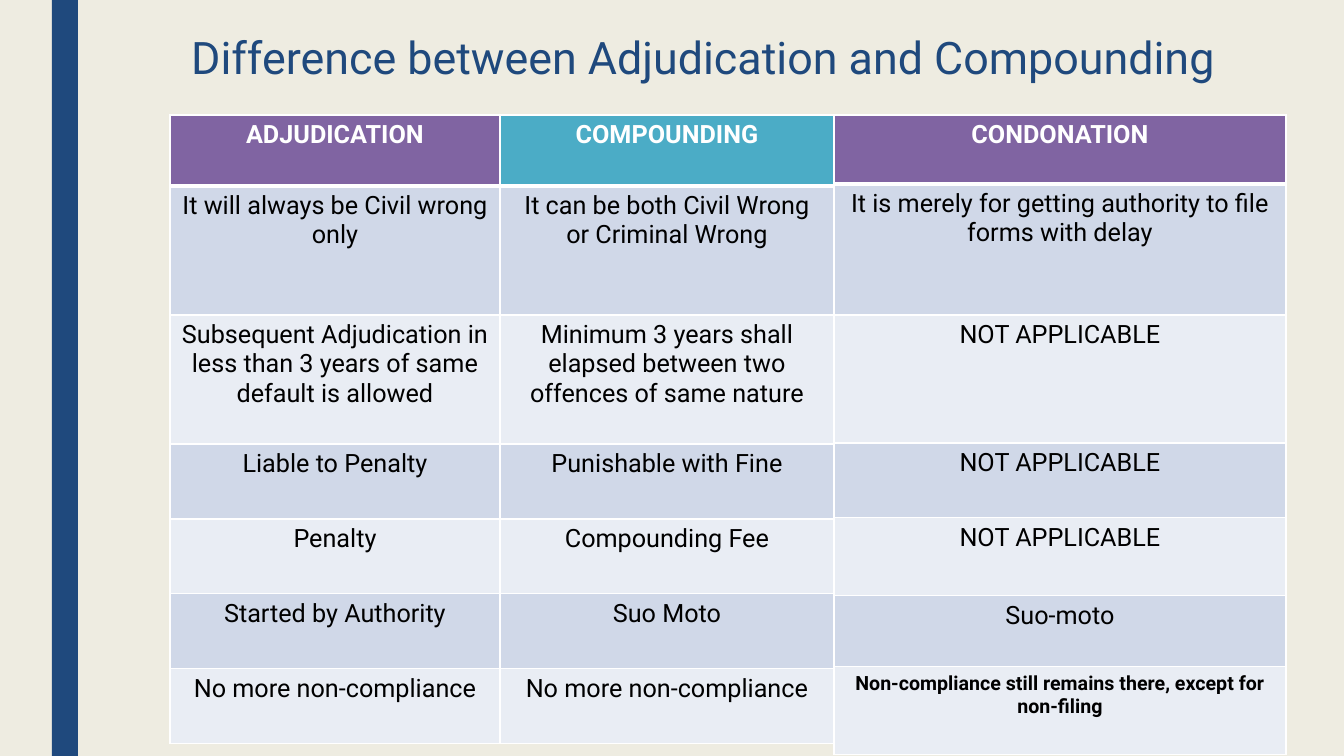
from dataclasses import dataclass

from lxml.etree import SubElement
from pptx import Presentation
from pptx.dml.color import RGBColor
from pptx.enum.shapes import MSO_SHAPE
from pptx.enum.text import MSO_ANCHOR, PP_ALIGN
from pptx.oxml.ns import qn
from pptx.util import Emu, Pt


@dataclass(frozen=True)
class Theme:
    font: str = "Roboto"
    background: str = "EEECE1"
    navy: str = "1F497D"
    purple: str = "8064A2"
    teal: str = "4BACC6"
    white: str = "FFFFFF"
    black: str = "000000"
    bands: tuple = ("E9EDF4", "D0D8E8")
    title_size: int = 32
    cell_size: int = 18
    small_size: int = 14
    thin_line: int = 1
    header_line: int = 3


THEME = Theme()
TITLE = "Difference between Adjudication and Compounding"
SMALL_BOLD = "Non-compliance still remains there, except for non-filing"
TABLE_TOP = 115
TABLES = [
    {
        "left": 170,
        "columns": [330, 334],
        "rows": [71, 129, 129, 75, 75, 75, 75],
        "headers": [THEME.purple, THEME.teal],
        "content": [
            ("ADJUDICATION", "COMPOUNDING"),
            ("It will always be Civil wrong only", "It can be both Civil Wrong or Criminal Wrong"),
            (
                "Subsequent Adjudication in less than 3 years of same default is allowed",
                "Minimum 3 years shall elapsed between two offences of same nature",
            ),
            ("Liable to Penalty", "Punishable with Fine"),
            ("Penalty", "Compounding Fee"),
            ("Started by Authority", "Suo Moto"),
            ("No more non-compliance", "No more non-compliance"),
        ],
    },
    {
        "left": 834,
        "columns": [452],
        "rows": [69, 131, 128, 75, 78, 71, 88],
        "headers": [THEME.purple],
        "content": [
            ("CONDONATION",),
            ("It is merely for getting authority to file forms with delay",),
            ("NOT APPLICABLE",),
            ("NOT APPLICABLE",),
            ("NOT APPLICABLE",),
            ("Suo-moto",),
            (SMALL_BOLD,),
        ],
    },
]


def px(length):
    return Emu(round(length * 914400 / 100.8))


def color(value):
    return RGBColor.from_string(value)


def format_text(paragraph, size, text_color, bold=False):
    paragraph.alignment = PP_ALIGN.CENTER
    for run in paragraph.runs:
        run.font.name = THEME.font
        run.font.size = Pt(size)
        run.font.bold = bold
        run.font.color.rgb = color(text_color)


def add_borders(cell, row_index):
    widths = {
        "a:lnL": THEME.thin_line,
        "a:lnR": THEME.thin_line,
        "a:lnT": THEME.header_line if row_index == 1 else THEME.thin_line,
        "a:lnB": THEME.header_line if row_index == 0 else THEME.thin_line,
    }
    properties = cell._tc.get_or_add_tcPr()
    for tag, width in widths.items():
        line = SubElement(properties, qn(tag), w=str(Pt(width)))
        fill = SubElement(line, qn("a:solidFill"))
        SubElement(fill, qn("a:srgbClr"), val=THEME.white)


def add_side_bar(slide):
    bar = slide.shapes.add_shape(MSO_SHAPE.RECTANGLE, px(52), 0, px(26), px(756))
    bar.shadow.inherit = False
    bar.fill.solid()
    bar.fill.fore_color.rgb = color(THEME.navy)
    bar.line.fill.background()


def add_title(slide):
    title = slide.shapes.title
    title.left, title.top, title.width, title.height = px(151), px(31), px(1105), px(82)
    title.text_frame.text = TITLE
    title.text_frame.word_wrap = True
    title.text_frame.vertical_anchor = MSO_ANCHOR.TOP
    paragraph = title.text_frame.paragraphs[0]
    paragraph.line_spacing = 0.89
    format_text(paragraph, THEME.title_size, THEME.navy)


def add_comparison(slide, comparison):
    columns, rows = comparison["columns"], comparison["rows"]
    table = slide.shapes.add_table(
        len(rows), len(columns), px(comparison["left"]), px(TABLE_TOP),
        px(sum(columns)), px(sum(rows)),
    ).table
    for column, width in zip(table.columns, columns):
        column.width = px(width)
    for row, height in zip(table.rows, rows):
        row.height = px(height)
    for row_index, texts in enumerate(comparison["content"]):
        for column_index, text in enumerate(texts):
            cell = table.cell(row_index, column_index)
            is_header = row_index == 0
            is_small = text == SMALL_BOLD
            add_borders(cell, row_index)
            cell.fill.solid()
            cell.fill.fore_color.rgb = color(
                comparison["headers"][column_index] if is_header else THEME.bands[row_index % 2]
            )
            cell.text_frame.text = text
            format_text(
                cell.text_frame.paragraphs[0],
                THEME.small_size if is_small else THEME.cell_size,
                THEME.white if is_header else THEME.black,
                is_header or is_small,
            )


def main():
    presentation = Presentation()
    presentation.slide_width, presentation.slide_height = px(1344), px(756)
    slide = presentation.slides.add_slide(presentation.slide_layouts[5])
    slide.background.fill.solid()
    slide.background.fill.fore_color.rgb = color(THEME.background)
    add_side_bar(slide)
    add_title(slide)
    for comparison in TABLES:
        add_comparison(slide, comparison)
    presentation.save("out.pptx")


if __name__ == "__main__":
    main()
